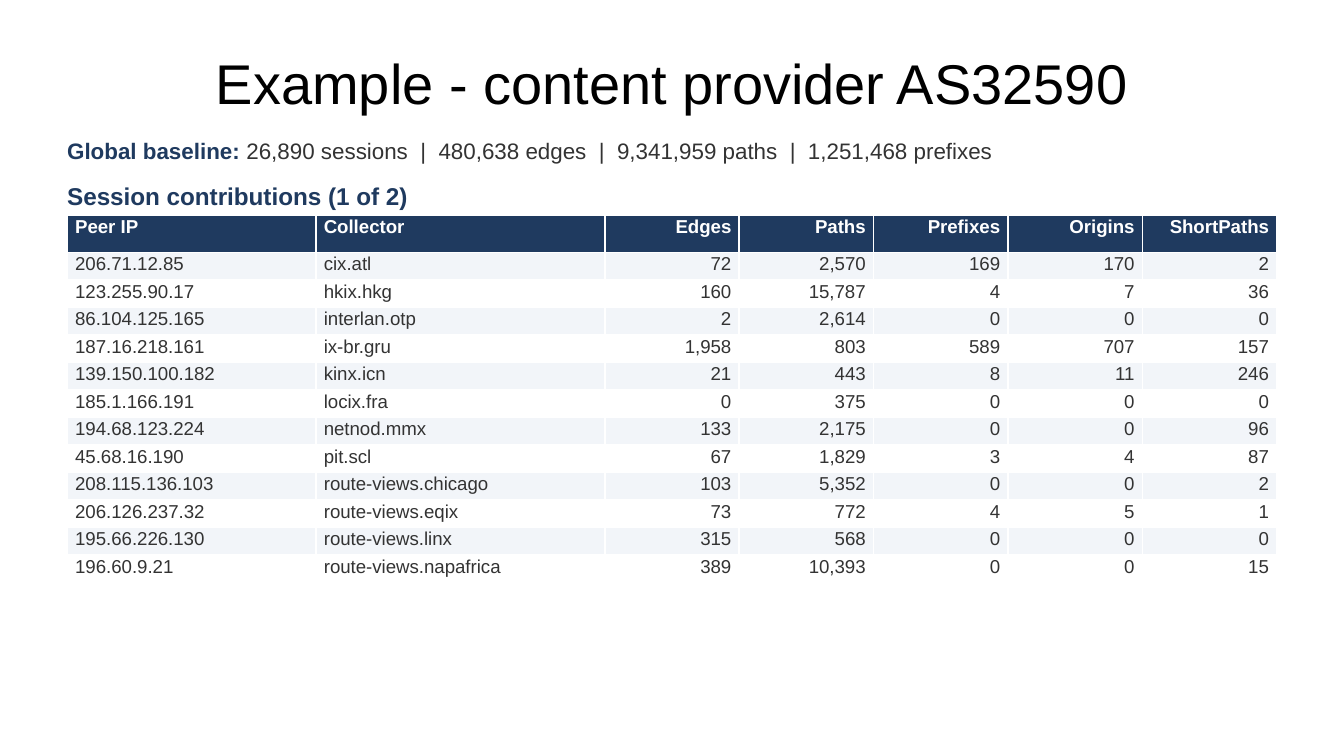
from pptx import Presentation
from pptx.dml.color import RGBColor
from pptx.enum.text import MSO_ANCHOR, MSO_AUTO_SIZE, PP_ALIGN
from pptx.util import Cm, Pt

BLACK = RGBColor(0x00, 0x00, 0x00)
WHITE = RGBColor(0xFF, 0xFF, 0xFF)
NAVY = RGBColor(0x1F, 0x3A, 0x5F)
GREY = RGBColor(0x33, 0x33, 0x33)
PALE = RGBColor(0xF2, 0xF5, 0xF9)

LEFT, WIDTH = Cm(1.27), Cm(22.86)
COLUMN_WIDTHS = [4.7, 5.46] + [2.54] * 5
HEADER_HEIGHT, ROW_HEIGHT = Cm(0.71), Cm(0.52)
TEXT_COLUMNS = 2

BASELINE = ["26,890 sessions", "480,638 edges", "9,341,959 paths", "1,251,468 prefixes"]
HEADER = ["Peer IP", "Collector", "Edges", "Paths", "Prefixes", "Origins", "ShortPaths"]
SESSIONS = [
    ("206.71.12.85", "cix.atl", 72, 2570, 169, 170, 2),
    ("123.255.90.17", "hkix.hkg", 160, 15787, 4, 7, 36),
    ("86.104.125.165", "interlan.otp", 2, 2614, 0, 0, 0),
    ("187.16.218.161", "ix-br.gru", 1958, 803, 589, 707, 157),
    ("139.150.100.182", "kinx.icn", 21, 443, 8, 11, 246),
    ("185.1.166.191", "locix.fra", 0, 375, 0, 0, 0),
    ("194.68.123.224", "netnod.mmx", 133, 2175, 0, 0, 96),
    ("45.68.16.190", "pit.scl", 67, 1829, 3, 4, 87),
    ("208.115.136.103", "route-views.chicago", 103, 5352, 0, 0, 2),
    ("206.126.237.32", "route-views.eqix", 73, 772, 4, 5, 1),
    ("195.66.226.130", "route-views.linx", 315, 568, 0, 0, 0),
    ("196.60.9.21", "route-views.napafrica", 389, 10393, 0, 0, 15),
]


class SlideWriter:
    """Holds the text style and the current slide."""

    font = "Arial"

    def __init__(self, page):
        self.page = page

    def add_span(self, para, text, size, color, bold=False):
        span = para.add_run()
        span.text = text
        span.font.name = self.font
        span.font.size = Pt(size)
        span.font.bold = bold
        span.font.color.rgb = color

    def add_title(self, text, top, height):
        box = self.page.shapes.title
        box.left, box.top, box.width, box.height = LEFT, top, WIDTH, height
        frame = box.text_frame
        frame.vertical_anchor = MSO_ANCHOR.MIDDLE
        para = frame.paragraphs[0]
        para.alignment = PP_ALIGN.CENTER
        self.add_span(para, text, 30, BLACK)

    def add_line(self, top, height, spans):
        box = self.page.shapes.add_textbox(LEFT, top, WIDTH, height)
        frame = box.text_frame
        frame.word_wrap = True
        frame.auto_size = MSO_AUTO_SIZE.SHAPE_TO_FIT_TEXT
        frame.margin_left = frame.margin_right = 0
        frame.margin_top = frame.margin_bottom = 0
        for text, size, color, bold in spans:
            self.add_span(frame.paragraphs[0], text, size, color, bold)

    def fill_cell(self, cell, text, fill, color, bold, alignment):
        cell.fill.solid()
        cell.fill.fore_color.rgb = fill
        cell.margin_left = cell.margin_right = Cm(0.15)
        cell.margin_top = cell.margin_bottom = Cm(0.03)
        para = cell.text_frame.paragraphs[0]
        para.alignment = alignment
        self.add_span(para, text, 10, color, bold)

    def add_table(self, top, header, records):
        rows = [header, *records]
        height = HEADER_HEIGHT + ROW_HEIGHT * len(records)
        table = self.page.shapes.add_table(
            len(rows), len(header), LEFT, top, WIDTH, height).table
        for column, width in zip(table.columns, COLUMN_WIDTHS):
            column.width = Cm(width)
        for i, values in enumerate(rows):
            is_header = i == 0
            table.rows[i].height = HEADER_HEIGHT if is_header else ROW_HEIGHT
            fill = NAVY if is_header else PALE if i % 2 else WHITE
            color = WHITE if is_header else GREY
            for j, value in enumerate(values):
                text = f"{value:,}" if isinstance(value, int) else value
                alignment = PP_ALIGN.LEFT if j < TEXT_COLUMNS else PP_ALIGN.RIGHT
                self.fill_cell(table.cell(i, j), text, fill, color, is_header, alignment)


def main():
    deck = Presentation()
    deck.slide_width, deck.slide_height = Cm(25.4), Cm(14.29)
    title_only = deck.slide_layouts[5]
    writer = SlideWriter(deck.slides.add_slide(title_only))

    # Title
    writer.add_title("Example - content provider AS32590", Cm(0.58), Cm(1.96))

    # Baseline and table heading
    writer.add_line(Cm(2.59), Cm(0.71), [
        ("Global baseline: ", 12, NAVY, True),
        ("  |  ".join(BASELINE), 12, GREY, False),
    ])
    writer.add_line(Cm(3.43), Cm(0.61), [
        ("Session contributions (1 of 2)", 13, NAVY, True),
    ])

    # Session table
    writer.add_table(Cm(4.06), HEADER, SESSIONS)

    deck.save("out.pptx")


if __name__ == "__main__":
    main()
